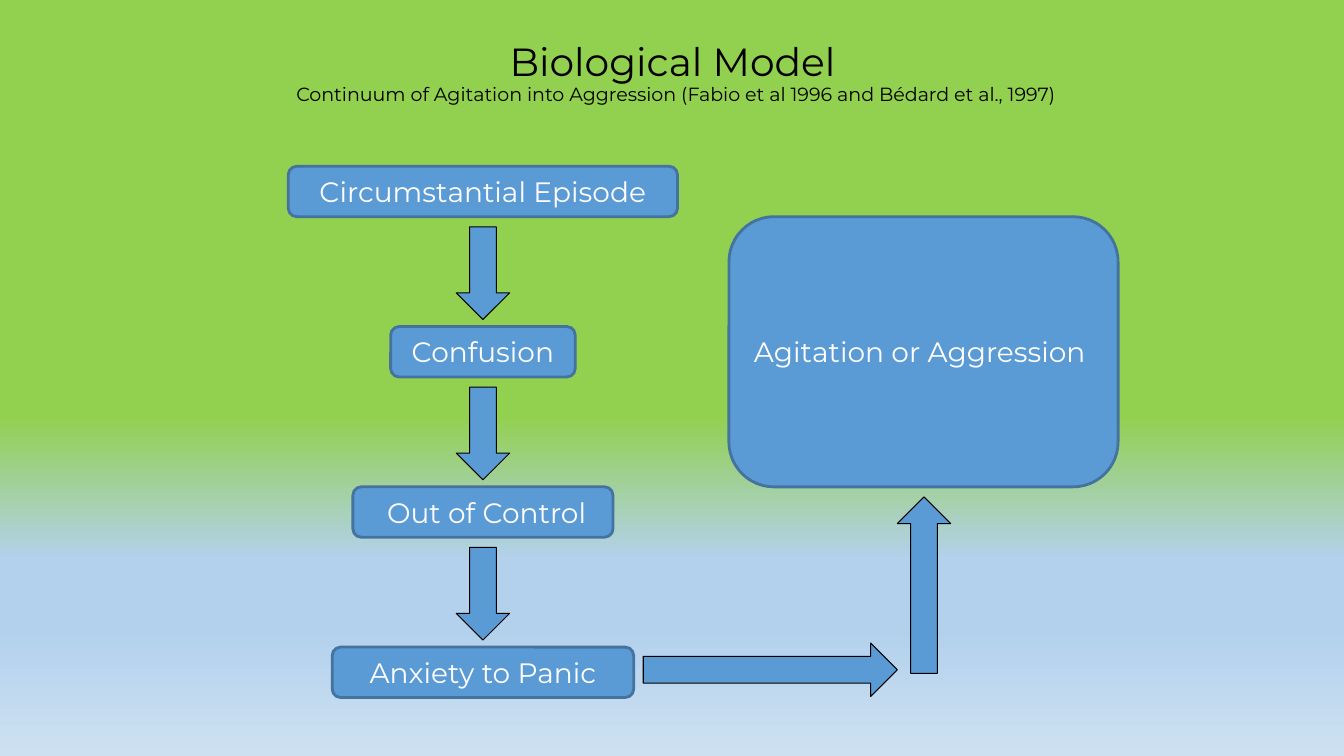
from lxml import etree
from pptx import Presentation
from pptx.dml.color import RGBColor
from pptx.enum.shapes import MSO_SHAPE
from pptx.enum.text import MSO_ANCHOR, PP_ALIGN
from pptx.oxml.ns import qn
from pptx.util import Inches, Pt

BOX = MSO_SHAPE.ROUNDED_RECTANGLE
DOWN, RIGHT, UP = MSO_SHAPE.DOWN_ARROW, MSO_SHAPE.RIGHT_ARROW, MSO_SHAPE.UP_ARROW
CENTER = PP_ALIGN.CENTER
TOP, MIDDLE = MSO_ANCHOR.TOP, MSO_ANCHOR.MIDDLE

FONT = "Montserrat"
COLORS = {
    "text": "000000",
    "box_text": "FFFFFF",
    "fill": "5B9BD5",
    "box_edge": "43739E",
    "arrow_edge": "000000",
    "green": "92D050",
    "sky": "B3D1EC",
    "pale": "CCE0F2",
}
BACKGROUND_STOPS = [(0, "green"), (55, "green"), (74, "sky"), (83, "sky"), (100, "pale")]

# Text and box width of each stage, from top to bottom
STAGES = [
    ("Circumstantial Episode", 3.86),
    ("Confusion", 1.83),
    (" Out of Control", 2.58),
    ("Anxiety to Panic", 2.99),
]
STAGE_CENTER, STAGE_TOP, STAGE_PITCH, STAGE_HEIGHT = 4.79, 1.65, 1.59, 0.5
ARROW_WIDTH, ARROW_LENGTH, ARROW_GAP = 0.53, 0.92, 0.1


def rgb(name):
    return RGBColor.from_string(COLORS[name])


def paint_background(slide):
    fill = slide.background.fill
    fill.gradient()
    fill.gradient_angle = 270
    stops = slide.element.find(".//" + qn("a:gsLst"))
    for stop in list(stops):
        stops.remove(stop)
    for percent, name in BACKGROUND_STOPS:
        stop = etree.SubElement(stops, qn("a:gs"), pos=str(percent * 1000))
        etree.SubElement(stop, qn("a:srgbClr"), val=COLORS[name])


def write(shape, text, size, color, anchor=MIDDLE, **paragraph_format):
    frame = shape.text_frame
    frame.word_wrap = True
    frame.vertical_anchor = anchor
    paragraph = frame.paragraphs[0]
    for name, value in {"alignment": CENTER, **paragraph_format}.items():
        setattr(paragraph, name, value)
    run = paragraph.add_run()
    run.text = text
    for name, value in {"name": FONT, "size": Pt(size)}.items():
        setattr(run.font, name, value)
    run.font.color.rgb = rgb(color)
    return paragraph


def add_heading(slide, text, top, height, size, **text_format):
    heading = slide.shapes.add_textbox(
        Inches(1.67), Inches(top), Inches(10), Inches(height))
    return write(heading, text, size, "text", **text_format)


def add_figure(slide, kind, left, top, width, height, edge, edge_width):
    figure = slide.shapes.add_shape(
        kind, Inches(left), Inches(top), Inches(width), Inches(height))
    figure.shadow.inherit = False
    figure.fill.solid()
    figure.fill.fore_color.rgb = rgb("fill")
    figure.line.color.rgb = rgb(edge)
    figure.line.width = Pt(edge_width)
    return figure


def add_box(slide, text, left, top, width, height):
    box = add_figure(slide, BOX, left, top, width, height, "box_edge", 2)
    write(box, text, 20, "box_text")


def add_arrow(slide, kind, left, top, width, height):
    add_figure(slide, kind, left, top, width, height, "arrow_edge", 0.75)


def add_stages(slide):
    for index, (text, width) in enumerate(STAGES):
        top = STAGE_TOP + index * STAGE_PITCH
        add_box(slide, text, STAGE_CENTER - width / 2, top, width, STAGE_HEIGHT)
        if index < len(STAGES) - 1:
            add_arrow(slide, DOWN, STAGE_CENTER - ARROW_WIDTH / 2,
                      top + STAGE_HEIGHT + ARROW_GAP, ARROW_WIDTH, ARROW_LENGTH)


def main():
    presentation = Presentation()
    presentation.slide_width = Inches(13.33)
    presentation.slide_height = Inches(7.5)
    slide = presentation.slides.add_slide(presentation.slide_layouts[6])
    paint_background(slide)

    add_heading(slide, "Biological Model", 0.01, 1.25, 28, line_spacing=0.9)
    subtitle = add_heading(
        slide,
        "Continuum of Agitation into Aggression (Fabio et al 1996 and Bédard et al., 1997)",
        0.83, 0.42, 13.6, anchor=TOP, line_spacing=0.7, space_before=Pt(10))
    indents = subtitle._p.get_or_add_pPr()
    indents.set("marL", str(Inches(0.5)))
    indents.set("indent", str(Inches(-0.44)))

    add_stages(slide)
    add_box(slide, "Agitation or Aggression ", 7.23, 2.15, 3.86, 2.68)
    add_arrow(slide, RIGHT, 6.38, 6.38, 2.52, ARROW_WIDTH)
    add_arrow(slide, UP, 8.9, 4.93, ARROW_WIDTH, 1.75)

    presentation.save("out.pptx")


if __name__ == "__main__":
    main()
